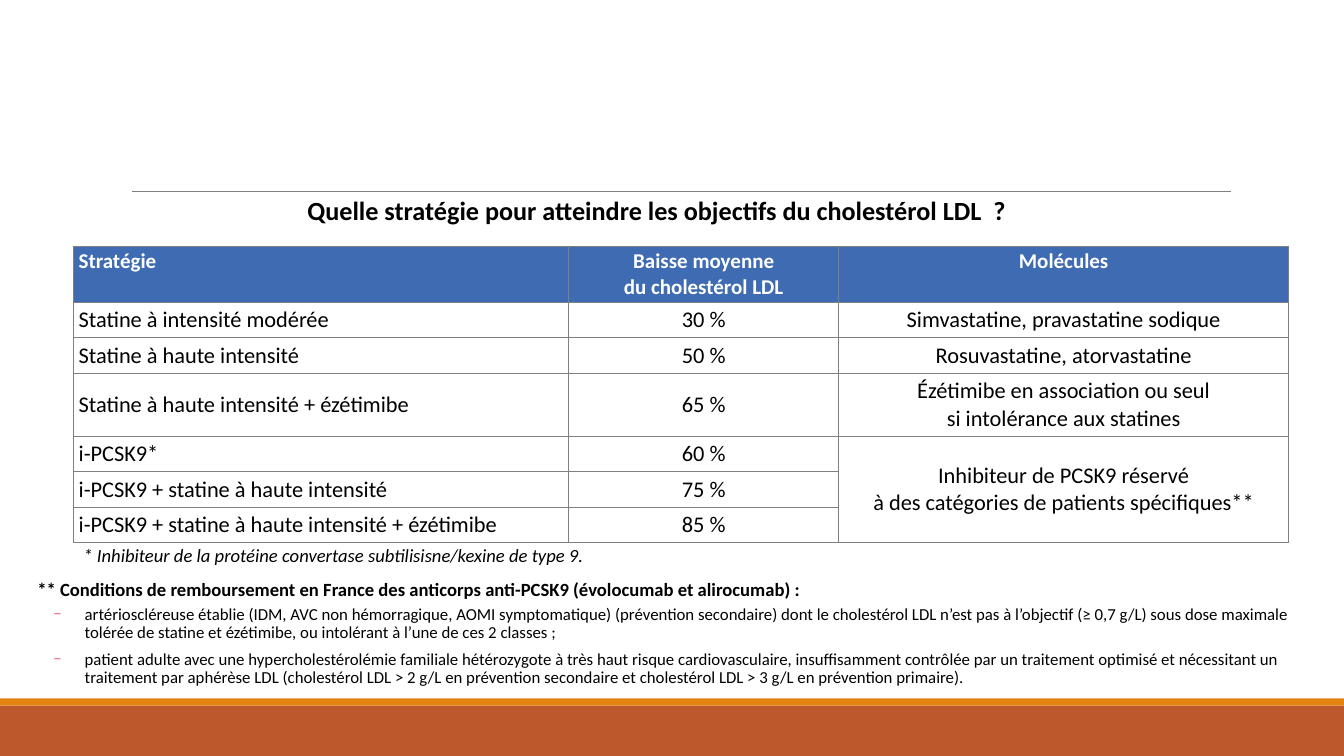
import copy

import lxml.etree
import pptx
import pptx.dml.color
import pptx.enum.shapes
import pptx.enum.text
import pptx.oxml.ns
import pptx.util

Inches = pptx.util.Inches
Pt = pptx.util.Pt
RGBColor = pptx.dml.color.RGBColor
ALIGN = pptx.enum.text.PP_ALIGN
ANCHOR = pptx.enum.text.MSO_ANCHOR
qn = pptx.oxml.ns.qn

RUST = RGBColor(0xBD, 0x58, 0x2C)
ORANGE = RGBColor(0xE4, 0x83, 0x12)
GREY = RGBColor(0x80, 0x80, 0x80)
BLUE = RGBColor(0x3E, 0x6B, 0xB1)
PINK = RGBColor(0xEC, 0x66, 0x7F)
BLACK = RGBColor(0, 0, 0)
WHITE = RGBColor(0xFF, 0xFF, 0xFF)

TITLE = "Quelle stratégie pour atteindre les objectifs du cholestérol LDL  ?"
FOOTNOTE = "* Inhibiteur de la protéine convertase subtilisisne/kexine de type 9."
CONDITIONS_HEADING = (
    "** Conditions de remboursement en France des anticorps anti-PCSK9 "
    "(évolocumab et alirocumab) :"
)
CONDITIONS = [
    "artérioscléreuse établie (IDM, AVC non hémorragique, AOMI symptomatique) "
    "(prévention secondaire) dont le cholestérol LDL n’est pas à l’objectif "
    "(≥ 0,7 g/L) sous dose maximale tolérée de statine et ézétimibe, ou "
    "intolérant à l’une de ces 2 classes ;",
    "patient adulte avec une hypercholestérolémie familiale hétérozygote à très "
    "haut risque cardiovasculaire, insuffisamment contrôlée par un traitement "
    "optimisé et nécessitant un traitement par aphérèse LDL (cholestérol LDL > 2 g/L "
    "en prévention secondaire et cholestérol LDL > 3 g/L en prévention primaire).",
]
STRATEGIES = [
    ("Stratégie", "Baisse moyenne\ndu cholestérol LDL", "Molécules"),
    ("Statine à intensité modérée", "30 %", "Simvastatine, pravastatine sodique"),
    ("Statine à haute intensité", "50 %", "Rosuvastatine, atorvastatine"),
    ("Statine à haute intensité + ézétimibe", "65 %",
     "Ézétimibe en association ou seul\nsi intolérance aux statines"),
    ("i-PCSK9*", "60 %",
     "Inhibiteur de PCSK9 réservé\nà des catégories de patients spécifiques**"),
    ("i-PCSK9 + statine à haute intensité", "75 %", ""),
    ("i-PCSK9 + statine à haute intensité + ézétimibe", "85 %", ""),
]
COLUMN_WIDTHS = [4.91, 2.68, 4.46]
ROW_HEIGHTS = [0.55, 0.35, 0.35, 0.63, 0.35, 0.35, 0.35]


def set_attributes(target, values):
    """Set each named attribute on the target."""
    for name, value in values.items():
        setattr(target, name, value)


def write(para, text, size, color=BLACK, layout=None, **font):
    """Fill a paragraph with text in one format."""
    para.text = text
    set_attributes(para, layout or {})
    for span in para.runs:
        set_attributes(span.font, {"name": "Calibri", "size": Pt(size), **font})
        span.font.color.rgb = color
    for line_break in para._p.findall(qn("a:br")):
        line_break.insert(0, copy.deepcopy(para.runs[0]._r.rPr))


def add_band(page, top, height, color):
    """Add a full-width colour band."""
    band = page.shapes.add_shape(
        pptx.enum.shapes.MSO_SHAPE.RECTANGLE,
        0, Inches(top), Inches(13.33), Inches(height))
    band.shadow.inherit = False
    band.fill.solid()
    band.fill.fore_color.rgb = color
    band.line.fill.background()


def add_rule(page, left, right, top):
    """Add a thin horizontal line."""
    rule = page.shapes.add_connector(
        pptx.enum.shapes.MSO_CONNECTOR.STRAIGHT,
        Inches(left), Inches(top), Inches(right), Inches(top))
    rule.line.color.rgb = GREY
    rule.line.width = Pt(0.5)
    lxml.etree.SubElement(rule._element.spPr, qn("a:effectLst"))


def add_text_frame(page, left, top, width, height, inset=0.1):
    """Add a wrapping text box and return its frame."""
    box = page.shapes.add_textbox(
        Inches(left), Inches(top), Inches(width), Inches(height))
    set_attributes(box.text_frame, {
        "word_wrap": True, "margin_left": Inches(inset), "margin_right": Inches(inset)})
    return box.text_frame


def add_dash(para):
    """Give a paragraph a hanging pink dash."""
    properties = para._p.get_or_add_pPr()
    properties.set("marL", str(Inches(0.47)))
    properties.set("indent", str(Inches(-0.31)))
    color = lxml.etree.SubElement(properties, qn("a:buClr"))
    lxml.etree.SubElement(color, qn("a:srgbClr"), val=str(PINK))
    lxml.etree.SubElement(properties, qn("a:buFont"), typeface="Calibri")
    lxml.etree.SubElement(properties, qn("a:buChar"), char="−")


def add_borders(cell):
    """Draw the four borders of a cell."""
    properties = cell._tc.get_or_add_tcPr()
    for side in ("a:lnL", "a:lnR", "a:lnT", "a:lnB"):
        border = lxml.etree.SubElement(properties, qn(side), w=str(Pt(0.75)))
        fill = lxml.etree.SubElement(border, qn("a:solidFill"))
        lxml.etree.SubElement(fill, qn("a:srgbClr"), val=str(GREY))


def fill_cell(cell, text, is_header, is_first_column):
    """Style one table cell and write its text."""
    set_attributes(cell, {
        "margin_left": Inches(0.05), "margin_right": Inches(0.05),
        "margin_top": Inches(0.03), "margin_bottom": Inches(0.03),
        "vertical_anchor": ANCHOR.TOP if is_header else ANCHOR.MIDDLE})
    add_borders(cell)
    cell.fill.solid()
    cell.fill.fore_color.rgb = BLUE if is_header else WHITE
    write(cell.text_frame.paragraphs[0], text, 15 if is_header else 16,
          WHITE if is_header else BLACK,
          {"alignment": ALIGN.LEFT if is_first_column else ALIGN.CENTER},
          bold=is_header)


def add_strategy_table(page):
    """Add the table of strategies."""
    table = page.shapes.add_table(
        len(STRATEGIES), len(COLUMN_WIDTHS), Inches(0.73), Inches(2.44),
        Inches(sum(COLUMN_WIDTHS)), Inches(sum(ROW_HEIGHTS))).table
    set_attributes(table, {"first_row": False, "horz_banding": False})
    for column, width in zip(table.columns, COLUMN_WIDTHS):
        column.width = Inches(width)
    for row, height in zip(table.rows, ROW_HEIGHTS):
        row.height = Inches(height)
    for row_index, texts in enumerate(STRATEGIES):
        for column_index, text in enumerate(texts):
            fill_cell(table.cell(row_index, column_index), text,
                      row_index == 0, column_index == 0)
    table.cell(4, 2).merge(table.cell(6, 2))


def add_conditions(page):
    """Add the reimbursement conditions."""
    frame = add_text_frame(page, 0.37, 5.71, 12.53, 1.24, inset=0)
    write(frame.paragraphs[0], CONDITIONS_HEADING, 13.3, bold=True, layout={
        "line_spacing": 0.9, "space_before": Pt(12), "space_after": Pt(2)})
    for condition in CONDITIONS:
        para = frame.add_paragraph()
        write(para, condition, 12, layout={
            "level": 1, "line_spacing": 0.9,
            "space_before": Pt(2), "space_after": Pt(4)})
        add_dash(para)


def main():
    """Build and save the slide."""
    deck = pptx.Presentation()
    set_attributes(deck, {"slide_width": Inches(13.33), "slide_height": Inches(7.5)})
    page = deck.slides.add_slide(deck.slide_layouts[6])
    add_band(page, 7, 0.5, RUST)
    add_band(page, 6.93, 0.07, ORANGE)
    add_rule(page, 1.31, 12.21, 1.9)
    add_conditions(page)
    title = add_text_frame(page, 2.95, 1.88, 7.2, 0.42)
    write(title.paragraphs[0], TITLE, 18.7, bold=True)
    add_strategy_table(page)
    footnote = add_text_frame(page, 0.73, 5.35, 12.53, 0.27)
    write(footnote.paragraphs[0], FOOTNOTE, 13.3, italic=True)
    deck.save("out.pptx")


if __name__ == "__main__":
    main()
